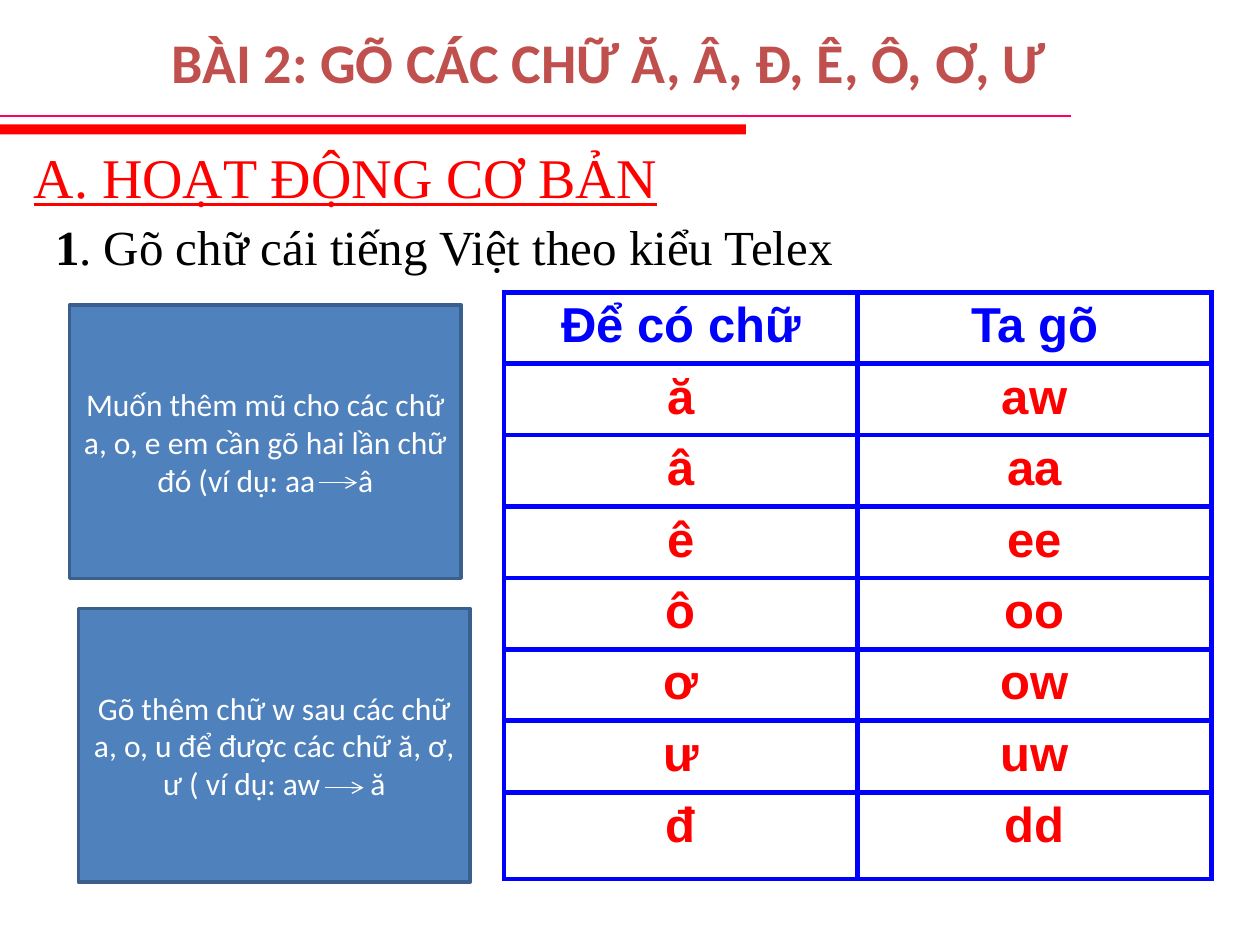
"""Build a lesson slide on typing Vietnamese letters with the Telex method."""

from dataclasses import dataclass

from lxml import etree
from pptx import Presentation
from pptx.dml.color import RGBColor
from pptx.enum.shapes import MSO_CONNECTOR, MSO_SHAPE
from pptx.enum.text import MSO_ANCHOR, MSO_AUTO_SIZE, PP_ALIGN
from pptx.oxml import parse_xml
from pptx.oxml.ns import nsdecls, qn
from pptx.util import Cm, Pt

RECTANGLE = MSO_SHAPE.RECTANGLE
STRAIGHT = MSO_CONNECTOR.STRAIGHT
MIDDLE = MSO_ANCHOR.MIDDLE
GROW = MSO_AUTO_SIZE.SHAPE_TO_FIT_TEXT
LEFT = PP_ALIGN.LEFT
CENTER = PP_ALIGN.CENTER

WHITE = RGBColor(0xFF, 0xFF, 0xFF)
BLACK = RGBColor(0x00, 0x00, 0x00)
RED = RGBColor(0xFF, 0x00, 0x00)
BLUE = RGBColor(0x00, 0x00, 0xFF)
PINK = RGBColor(0xFF, 0x00, 0x66)
BRICK = RGBColor(0xC0, 0x50, 0x4D)
STEEL = RGBColor(0x4F, 0x81, 0xBD)
STEEL_EDGE = RGBColor(0x3A, 0x5F, 0x8C)

SANS = "Calibri"
SERIF = "Times New Roman"
TABLE_FONT = "Arial"

TELEX_KEYS = [
    ("Để có chữ", "Ta gõ"),
    ("ă", "aw"),
    ("â", "aa"),
    ("ê", "ee"),
    ("ô", "oo"),
    ("ơ", "ow"),
    ("ư", "uw"),
    ("đ", "dd"),
]
COLUMN_WIDTH = 7.13
ROW_HEIGHT = 1.44
LAST_ROW_HEIGHT = 1.75


@dataclass(frozen=True)
class Tip:
    """A rule box whose example holds an arrow in a gap; lengths in cm."""

    left: float
    top: float
    rule: str
    result: str
    gap_points: float
    arrow_left: float
    arrow_top: float


TIPS = [
    Tip(1.4, 6.15, "Muốn thêm mũ cho các chữ a, o, e em cần gõ hai lần chữ đó (ví dụ: aa",
        "â", 20.3, 6.43, 9.73),
    Tip(1.58, 12.27, "Gõ thêm chữ w sau các chữ a, o, u để được các chữ ă, ơ, ư ( ví dụ: aw",
        "ă", 24.4, 6.56, 15.88),
]


def write(paragraph, text: str, *, font: str, size: float, color: RGBColor,
          bold: bool = False, underline: bool = False, align=LEFT, spacing: float = 0) -> None:
    """Append a formatted run to the paragraph."""
    paragraph.alignment = align
    run = paragraph.add_run()
    run.text = text
    run.font.name = font
    run.font.size = Pt(size)
    run.font.color.rgb = color
    run.font.bold = bold
    run.font.underline = underline
    if spacing:
        run._r.get_or_add_rPr().set("spc", str(round(spacing * 100)))


def add_heading(slide, left: float, top: float, width: float, height: float,
                wrap: bool = True, grow: bool = False):
    """Add a text box and return its first paragraph."""
    frame = slide.shapes.add_textbox(Cm(left), Cm(top), Cm(width), Cm(height)).text_frame
    frame.word_wrap = wrap
    if grow:
        frame.auto_size = GROW
    return frame.paragraphs[0]


def add_rectangle(slide, left: float, top: float, width: float, height: float, fill: RGBColor):
    """Add a filled rectangle without outline or shadow."""
    rectangle = slide.shapes.add_shape(RECTANGLE, Cm(left), Cm(top), Cm(width), Cm(height))
    rectangle.shadow.inherit = False
    rectangle.fill.solid()
    rectangle.fill.fore_color.rgb = fill
    rectangle.line.fill.background()
    return rectangle


def add_rule(slide, left: float, top: float, length: float, color: RGBColor,
             arrow: bool = False) -> None:
    """Add a thin horizontal line, with an open arrowhead if asked."""
    rule = slide.shapes.add_connector(STRAIGHT, Cm(left), Cm(top), Cm(left + length), Cm(top))
    rule.line.color.rgb = color
    rule.line.width = Pt(0.75)
    if arrow:
        etree.SubElement(rule.line._get_or_add_ln(), qn("a:tailEnd"), type="arrow")
    etree.SubElement(rule._element.spPr, qn("a:effectLst"))


def add_tip(slide, tip: Tip) -> None:
    """Add a rule box with the arrow of its example."""
    box = add_rectangle(slide, tip.left, tip.top, 7.9, 5.51, STEEL)
    box.line.color.rgb = STEEL_EDGE
    box.line.width = Pt(2)
    box.text_frame.word_wrap = True
    box.text_frame.vertical_anchor = MIDDLE
    for text, spacing in ((tip.rule, 0), (" ", tip.gap_points), (tip.result, 0)):
        write(box.text_frame.paragraphs[0], text, font=SANS, size=18, color=WHITE,
              align=CENTER, spacing=spacing)
    add_rule(slide, tip.arrow_left, tip.arrow_top, 0.77, WHITE, arrow=True)


def add_borders(cell, color: RGBColor, width: float) -> None:
    """Draw all four borders of a table cell."""
    properties = cell._tc.get_or_add_tcPr()
    for side in ("lnL", "lnR", "lnT", "lnB"):
        properties.append(parse_xml(
            f'<a:{side} {nsdecls("a")} w="{Pt(width)}"><a:solidFill>'
            f'<a:srgbClr val="{color}"/></a:solidFill></a:{side}>'))


def add_key_table(slide, left: float, top: float) -> None:
    """Add the table of letters and the keys that produce them."""
    row_count = len(TELEX_KEYS)
    height = ROW_HEIGHT * (row_count - 1) + LAST_ROW_HEIGHT
    table = slide.shapes.add_table(row_count, 2, Cm(left), Cm(top),
                                   Cm(2 * COLUMN_WIDTH), Cm(height)).table
    table.horz_banding = False
    for column in table.columns:
        column.width = Cm(COLUMN_WIDTH)
    for row_index, keys in enumerate(TELEX_KEYS):
        is_last = row_index == row_count - 1
        table.rows[row_index].height = Cm(LAST_ROW_HEIGHT if is_last else ROW_HEIGHT)
        for column_index, text in enumerate(keys):
            cell = table.cell(row_index, column_index)
            add_borders(cell, BLUE, 3)
            cell.fill.background()
            write(cell.text_frame.paragraphs[0], text, font=TABLE_FONT, size=28,
                  color=RED if row_index else BLUE, bold=True, align=CENTER)


def main() -> None:
    """Build and save the slide."""
    presentation = Presentation()
    presentation.slide_width = Cm(25.4)
    presentation.slide_height = Cm(19.05)
    slide = presentation.slides.add_slide(presentation.slide_layouts[6])

    add_key_table(slide, 10.16, 5.89)
    section = add_heading(slide, 0.43, 2.74, 14.6, 1.47)
    write(section, "A. HOẠT ĐỘNG CƠ BẢN", font=SERIF, size=32, color=RED, underline=True)
    add_rule(slide, 0, 2.34, 21.59, PINK)
    add_rectangle(slide, 0, 2.51, 15.04, 0.2, RED)
    title = add_heading(slide, 1.4, 0.43, 21.74, 1.63, wrap=False, grow=True)
    write(title, "BÀI 2: GÕ CÁC CHỮ Ă, Â, Đ, Ê, Ô, Ơ, Ư", font=SANS, size=32,
          color=BRICK, bold=True, align=CENTER)
    activity = add_heading(slide, 0.86, 4.24, 19.84, 1.45, grow=True)
    write(activity, "1", font=SERIF, size=28, color=BLACK, bold=True)
    write(activity, ". Gõ chữ cái tiếng Việt theo kiểu Telex", font=SERIF, size=28, color=BLACK)
    for tip in TIPS:
        add_tip(slide, tip)

    presentation.save("out.pptx")


if __name__ == "__main__":
    main()
